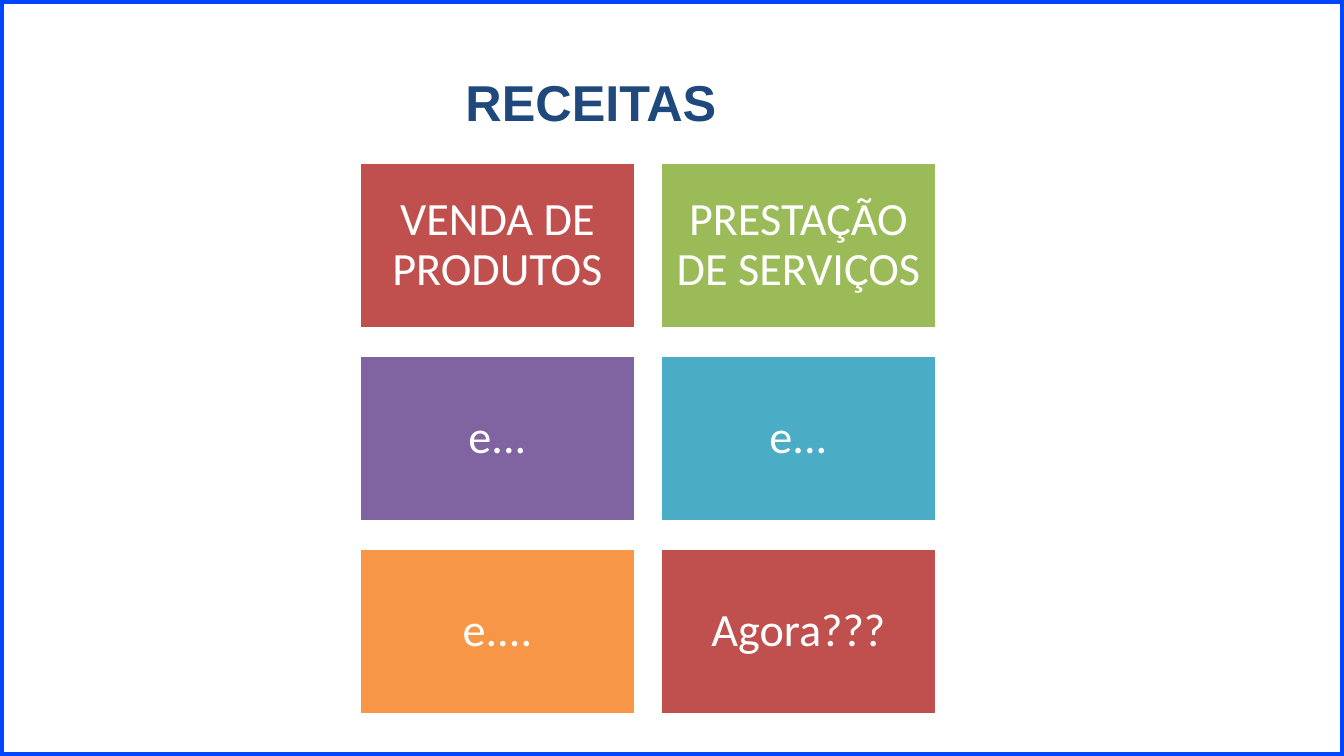
from dataclasses import dataclass
from pptx import Presentation
from pptx.dml.color import RGBColor
from pptx.enum.shapes import MSO_SHAPE
from pptx.enum.text import MSO_ANCHOR, PP_ALIGN
from pptx.util import Emu, Pt

RECT = MSO_SHAPE.RECTANGLE
TOP, MIDDLE = MSO_ANCHOR.TOP, MSO_ANCHOR.MIDDLE
CENTER = PP_ALIGN.CENTER
SCALE = 914400 / 100.8


@dataclass(frozen=True)
class Theme:
    white: str = "FFFFFF"
    navy: str = "1F497D"
    frame: str = "0045FF"
    red: str = "C0504D"
    green: str = "9BBB59"
    purple: str = "8064A2"
    teal: str = "4BACC6"
    orange: str = "F79646"
    head: str = "Arial"
    body: str = "Calibri"
    title: int = 36
    tile: int = 33


THEME = Theme()
TILES = [
    ("VENDA DE PRODUTOS", THEME.red),
    ("PRESTAÇÃO DE SERVIÇOS", THEME.green),
    ("e...", THEME.purple),
    ("e...", THEME.teal),
    ("e....", THEME.orange),
    ("Agora???", THEME.red),
]


def px(count):
    return Emu(round(count * SCALE))


def write(shape, text, font, size, color, bold=False, anchor=MIDDLE,
          pad=(14, 14), spacing=0.9, before=0):
    frame = shape.text_frame
    frame.word_wrap = True
    frame.vertical_anchor = anchor
    frame.margin_left = frame.margin_right = px(pad[0])
    frame.margin_top = frame.margin_bottom = px(pad[1])
    para = frame.paragraphs[0]
    para.alignment = CENTER
    para.line_spacing = spacing
    para.space_before = Pt(before)
    run = para.add_run()
    run.text = text
    run.font.name = font
    run.font.size = Pt(size)
    run.font.bold = bold
    run.font.color.rgb = RGBColor.from_string(color)


def block(slide, box, line, width, fill=None):
    shape = slide.shapes.add_shape(RECT, *map(px, box))
    shape.shadow.inherit = False
    shape.line.color.rgb = RGBColor.from_string(line)
    shape.line.width = Pt(width)
    if fill:
        shape.fill.solid()
        shape.fill.fore_color.rgb = RGBColor.from_string(fill)
    else:
        shape.fill.background()
    return shape


def heading(slide, box, text):
    title = slide.shapes.title
    title.left, title.top, title.width, title.height = map(px, box)
    write(title, text, THEME.head, THEME.title, THEME.navy, bold=True,
          anchor=TOP, pad=(9, 4), spacing=1.5, before=7)


def grid(slide, box, tiles, cols=2, gap=(26, 28)):
    left, top, width, height = box
    rows = len(tiles) // cols
    wide = (width - gap[0] * (cols - 1)) // cols
    high = (height - gap[1] * (rows - 1)) // rows
    for index, (text, color) in enumerate(tiles):
        row, col = divmod(index, cols)
        spot = (left + col * (wide + gap[0]), top + row * (high + gap[1]),
                wide, high)
        tile = block(slide, spot, THEME.white, 2, color)
        write(tile, text, THEME.body, THEME.tile, THEME.white)


def main():
    deck = Presentation()
    deck.slide_width, deck.slide_height = px(1344), px(756)
    slide = deck.slides.add_slide(deck.slide_layouts[5])
    block(slide, (0, 0, 1344, 756), THEME.frame, 6)
    grid(slide, (360, 163, 576, 551), TILES)
    heading(slide, (208, 37, 766, 90), "RECEITAS")
    deck.save("out.pptx")


if __name__ == "__main__":
    main()
